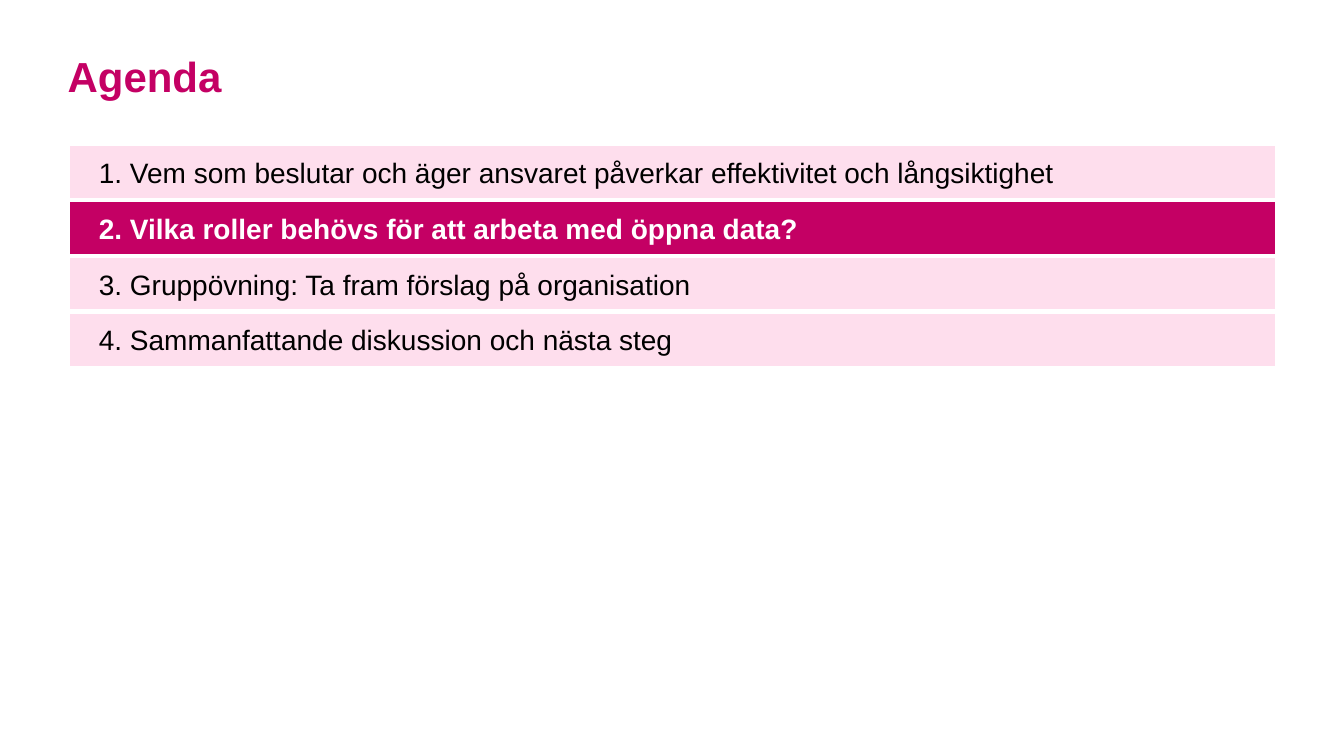
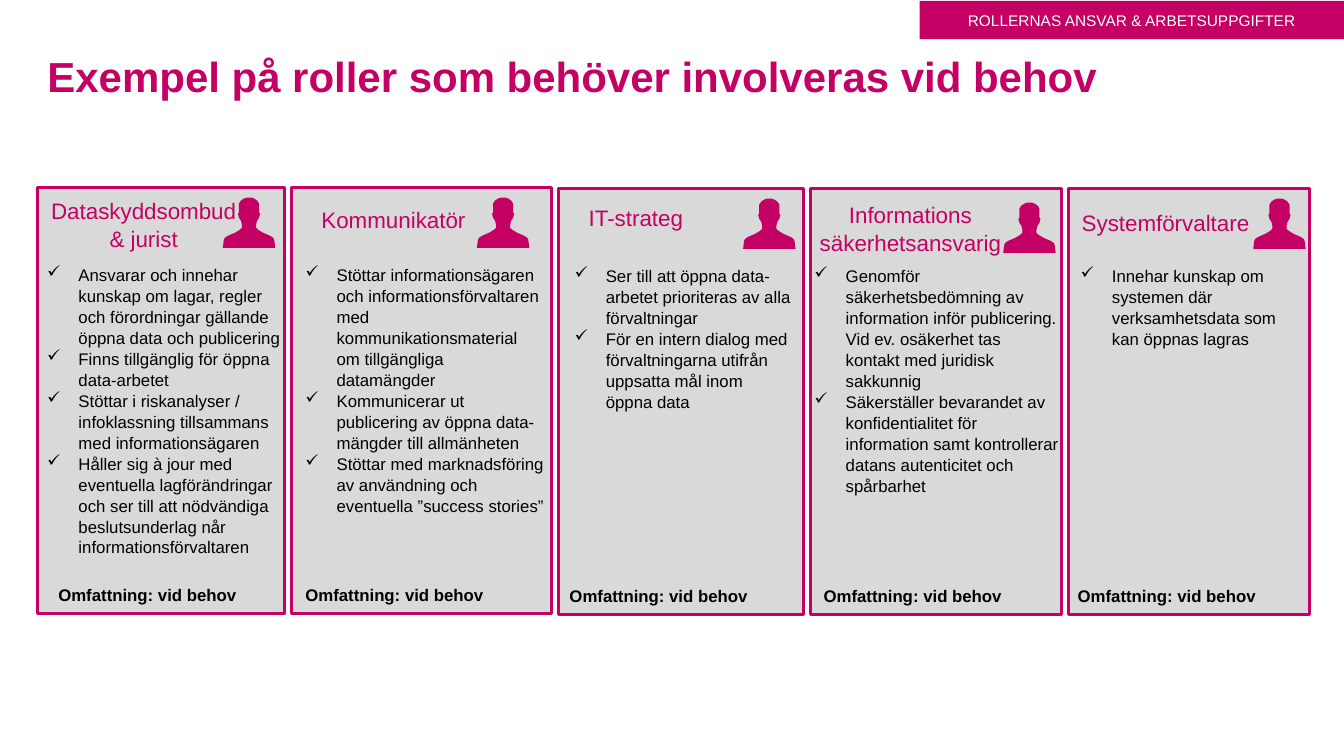
import dataclasses

import lxml.etree
import pptx
import pptx.dml.color
import pptx.enum.shapes
import pptx.enum.text
import pptx.oxml.ns
import pptx.util

Inches = pptx.util.Inches
ALIGN = pptx.enum.text.PP_ALIGN
ANCHOR = pptx.enum.text.MSO_ANCHOR
RECTANGLE = pptx.enum.shapes.MSO_SHAPE.RECTANGLE


@dataclasses.dataclass(frozen=True)
class Theme:
    font: str = "Arial"
    magenta: str = "C40064"
    pink: str = "FEDEED"
    gray: str = "D9D9D9"
    black: str = "000000"
    white: str = "FFFFFF"
    title_size: int = 30
    agenda_size: int = 20
    heading_size: int = 16
    body_size: int = 12
    tag_size: int = 11


@dataclasses.dataclass(frozen=True)
class Role:
    """Card width and top; heading, icon and text places are (left, top) or left."""
    heading: str
    width: float
    top: float
    heading_at: tuple
    heading_width: float
    heading_align: int
    icon_at: tuple
    duties_left: float
    duties_width: float
    scope_left: float
    duties: tuple


theme = Theme()


def write(shape, lines, size, color, bold=False, align=ALIGN.LEFT,
          anchor=ANCHOR.TOP, spacing=1.0):
    """Fill a shape with one paragraph per line, all in one style."""
    frame = shape.text_frame
    frame.text = "\n".join(lines)
    frame.word_wrap = True
    frame.auto_size = pptx.enum.text.MSO_AUTO_SIZE.NONE
    frame.vertical_anchor = anchor
    for paragraph in frame.paragraphs:
        paragraph.alignment = align
        paragraph.line_spacing = spacing
        for run in paragraph.runs:
            run.font.name = theme.font
            run.font.size = pptx.util.Pt(size)
            run.font.bold = bold
            run.font.color.rgb = pptx.dml.color.RGBColor.from_string(color)
    return frame


def paint(shape, fill, line=None, line_width=0):
    """Give a shape a flat fill and an optional outline."""
    shape.shadow.inherit = False
    shape.fill.solid()
    shape.fill.fore_color.rgb = pptx.dml.color.RGBColor.from_string(fill)
    if line:
        shape.line.color.rgb = pptx.dml.color.RGBColor.from_string(line)
        shape.line.width = pptx.util.Pt(line_width)
    else:
        shape.line.fill.background()


presentation = pptx.Presentation()
presentation.slide_width = Inches(13.33)
presentation.slide_height = Inches(7.5)

# Both slides with their titles
slides = []
for title_text, left, width in (
    ("Agenda", 0.67, 12),
    ("Exempel på roller som behöver involveras vid behov", 0.47, 10.71),
):
    slide = presentation.slides.add_slide(presentation.slide_layouts[5])
    title = slide.shapes.title
    title.left, title.top = Inches(left), Inches(0.5)
    title.width, title.height = Inches(width), Inches(0.91)
    frame = write(title, [title_text], theme.title_size, theme.magenta, bold=True)
    frame.margin_left = frame.margin_right = 0
    frame.margin_top = frame.margin_bottom = 0
    slides.append(slide)
agenda_slide, roles_slide = slides

# Agenda rows, the current one highlighted
agenda = (
    "1. Vem som beslutar och äger ansvaret påverkar effektivitet och långsiktighet",
    "2. Vilka roller behövs för att arbeta med öppna data?",
    "3. Gruppövning: Ta fram förslag på organisation",
    "4. Sammanfattande diskussion och nästa steg",
)
current_row = 1
row_pitch = 1.66 / 3
for index, entry in enumerate(agenda):
    current = index == current_row
    row = agenda_slide.shapes.add_shape(
        RECTANGLE, Inches(0.67), Inches(1.43 + index * row_pitch),
        Inches(12), Inches(0.56))
    paint(row, theme.magenta if current else theme.pink, theme.white, 3)
    frame = write(row, [entry], theme.agenda_size,
                  theme.white if current else theme.black,
                  bold=current, anchor=ANCHOR.MIDDLE)
    frame.margin_left = Inches(0.31)
    frame.margin_right = 0

# Section tag in the top right corner
tag = roles_slide.shapes.add_shape(
    RECTANGLE, Inches(9.12), Inches(0.01), Inches(4.21), Inches(0.38))
paint(tag, theme.magenta)
write(tag, ["ROLLERNAS ANSVAR & ARBETSUPPGIFTER"], theme.tag_size, theme.white,
      align=ALIGN.CENTER, anchor=ANCHOR.MIDDLE)

roles = (
    Role("Dataskyddsombud & jurist", 2.45, 1.86, (0.37, 1.9), 2.11, ALIGN.CENTER,
         (2.21, 1.96), 0.37, 2.62, 0.48, (
             "Ansvarar och innehar kunskap om lagar, regler och förordningar "
             "gällande öppna data och publicering",
             "Finns tillgänglig för öppna data-arbetet",
             "Stöttar i riskanalyser / infoklassning tillsammans med "
             "informationsägaren",
             "Håller sig à jour med eventuella lagförändringar och ser till att "
             "nödvändiga beslutsunderlag når informationsförvaltaren")),
    Role("Kommunikatör", 2.58, 1.86, (3.09, 1.99), 2.07, ALIGN.LEFT,
         (4.73, 1.96), 2.93, 2.58, 2.93, (
             "Stöttar informationsägaren och informationsförvaltaren med "
             "kommunikationsmaterial om tillgängliga datamängder",
             "Kommunicerar ut publicering av öppna data-mängder till allmänheten",
             "Stöttar med marknadsföring av användning och eventuella "
             "”success stories”")),
    Role("IT-strateg", 2.43, 1.87, (5.74, 1.97), 2.09, ALIGN.LEFT,
         (7.37, 1.97), 5.6, 2.35, 5.55, (
             "Ser till att öppna data-arbetet prioriteras av alla förvaltningar",
             "För en intern dialog med förvaltningarna utifrån uppsatta mål inom "
             "öppna data")),
    Role("Informations säkerhetsansvarig", 2.49, 1.87, (7.96, 1.94), 2.14,
         ALIGN.CENTER, (9.95, 2.01), 7.98, 2.63, 8.07, (
             "Genomför säkerhetsbedömning av information inför publicering. "
             "Vid ev. osäkerhet tas kontakt med juridisk sakkunnig",
             "Säkerställer bevarandet av konfidentialitet för information samt "
             "kontrollerar datans autenticitet och spårbarhet")),
    Role("Systemförvaltare", 2.39, 1.87, (10.63, 2.02), 2.25, ALIGN.LEFT,
         (12.43, 1.97), 10.62, 2.31, 10.59, (
             "Innehar kunskap om systemen där verksamhetsdata som kan öppnas "
             "lagras",)),
)

# Left half of the person outline in hundredths of an inch, mirrored for the right
icon_width = 52
left_half = [(24, 0), (21, 1), (18, 3), (16, 6), (16, 15), (15, 16), (16, 20),
             (18, 23), (19, 27), (19, 30), (17, 32), (12, 35), (5, 38), (2, 40),
             (1, 42), (0, 50)]
outline = left_half + [(icon_width - x, y) for x, y in reversed(left_half)]

# One card per role
card_left = 0.37
card_gap = 0.07
for role in roles:
    card = roles_slide.shapes.add_shape(
        RECTANGLE, Inches(card_left), Inches(role.top),
        Inches(role.width), Inches(4.23))
    paint(card, theme.gray, theme.magenta, 2)
    card_left += role.width + card_gap

    builder = roles_slide.shapes.build_freeform(*outline[0], scale=Inches(0.01))
    builder.add_line_segments(outline[1:], close=True)
    person = builder.convert_to_shape(*(Inches(place) for place in role.icon_at))
    paint(person, theme.magenta)

    heading = roles_slide.shapes.add_textbox(
        *(Inches(place) for place in role.heading_at),
        Inches(role.heading_width), Inches(0.64))
    write(heading, [role.heading], theme.heading_size, theme.magenta,
          align=role.heading_align, spacing=1.04)

    duties = roles_slide.shapes.add_textbox(
        Inches(role.duties_left), Inches(role.top + 0.71),
        Inches(role.duties_width), Inches(3.1))
    frame = write(duties, role.duties, theme.body_size, theme.black, spacing=1.04)
    for paragraph in frame.paragraphs:
        properties = paragraph._p.get_or_add_pPr()
        properties.set("marL", str(Inches(0.31)))
        properties.set("indent", str(-Inches(0.31)))
        bullet = lxml.etree.SubElement(properties, pptx.oxml.ns.qn("a:buChar"))
        bullet.set("char", "✓")

    scope = roles_slide.shapes.add_textbox(
        Inches(role.scope_left), Inches(role.top + 3.88), Inches(2.4), Inches(0.3))
    write(scope, ["Omfattning: vid behov"], theme.body_size, theme.black,
          bold=True, spacing=1.04)

presentation.save("out.pptx")
